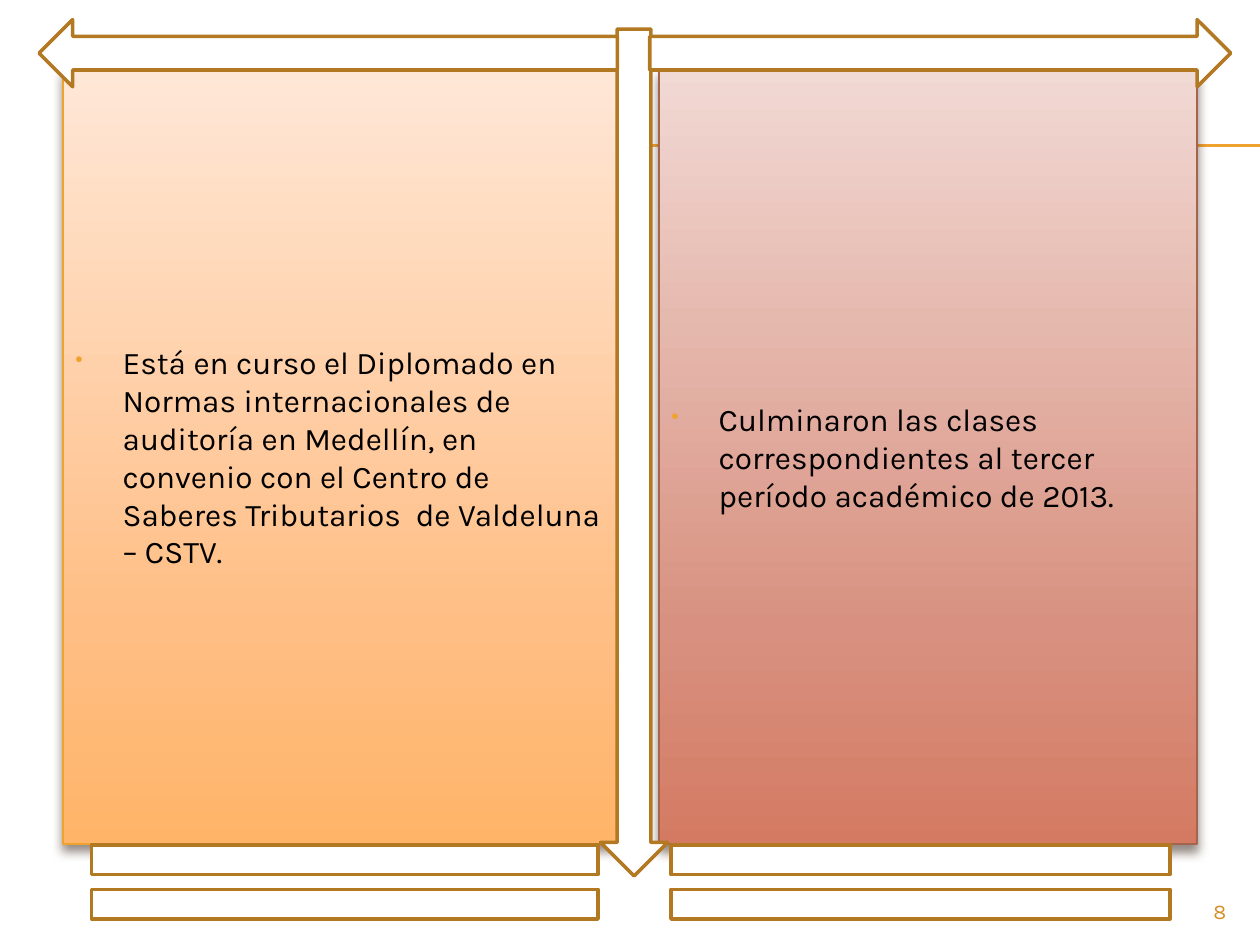
from dataclasses import dataclass

from lxml.etree import SubElement
from pptx import Presentation
from pptx.dml.color import RGBColor
from pptx.enum.shapes import MSO_CONNECTOR, MSO_SHAPE
from pptx.enum.text import MSO_ANCHOR, PP_ALIGN
from pptx.oxml.ns import qn
from pptx.shapes.autoshape import Shape
from pptx.slide import Slide
from pptx.text.text import _Paragraph
from pptx.util import Pt


@dataclass(frozen=True)
class Theme:
    font: str = "Karla"
    body_size: float = 18
    number_size: float = 12
    text: str = "000000"
    accent: str = "F0A22E"
    outline: str = "B27822"
    paper: str = "FFFFFF"
    number: str = "D48F29"
    shadow: str = "4E3B30"


@dataclass(frozen=True)
class Frame:
    left: float
    top: float
    width: float
    height: float

    def lengths(self) -> tuple[Pt, Pt, Pt, Pt]:
        return Pt(self.left), Pt(self.top), Pt(self.width), Pt(self.height)


@dataclass(frozen=True)
class Panel:
    frame: Frame
    gradient: tuple[str, str, str]
    border: str
    words: str


@dataclass(frozen=True)
class Ornament:
    kind: MSO_SHAPE
    frame: Frame


THEME = Theme()
GRADIENT_POSITIONS = (0, 72, 100)
BULLET_INDENT = 27

RULE_HEIGHTS = (82.8, 83.5)

PANELS = (
    Panel(
        Frame(36, 39.6, 318.2, 442.8),
        ("FFE7D7", "FFBE84", "FFB468"),
        THEME.accent,
        "Está en curso el Diplomado en Normas internacionales de auditoría en "
        "Medellín, en convenio con el Centro de Saberes Tributarios  de "
        "Valdeluna – CSTV.",
    ),
    Panel(
        Frame(376.6, 39.6, 307.4, 442.8),
        ("F1D9D4", "D89180", "D47A62"),
        "A5644E",
        "Culminaron las clases correspondientes al tercer período académico "
        "de 2013.",
    ),
)

ORNAMENTS = (
    Ornament(MSO_SHAPE.DOWN_ARROW, Frame(343.1, 16.6, 38.4, 484)),
    Ornament(MSO_SHAPE.RIGHT_ARROW, Frame(371.3, 11.2, 332, 38.4)),
    Ornament(MSO_SHAPE.LEFT_ARROW, Frame(22.3, 11.2, 330.5, 38.4)),
    Ornament(MSO_SHAPE.MATH_EQUAL, Frame(0, 468, 394, 72)),
    Ornament(MSO_SHAPE.MATH_EQUAL, Frame(332, 468, 388, 72)),
)


def color(code: str) -> RGBColor:
    return RGBColor.from_string(code)


def add_outlined(slide: Slide, kind: MSO_SHAPE, frame: Frame, border: str, weight: float) -> Shape:
    shape = slide.shapes.add_shape(kind, *frame.lengths())
    shape.shadow.inherit = False
    shape.line.color.rgb = color(border)
    shape.line.width = Pt(weight)
    return shape


def fill_gradient(shape: Shape, codes: tuple[str, str, str]) -> None:
    shape.fill.gradient()
    shape.fill.gradient_angle = 270
    stops = shape._element.spPr.find(qn("a:gradFill")).find(qn("a:gsLst"))
    for stop in list(stops):
        stops.remove(stop)
    for position, code in zip(GRADIENT_POSITIONS, codes):
        stop = SubElement(stops, qn("a:gs"), pos=str(position * 1000))
        SubElement(stop, qn("a:srgbClr"), val=code)


def cast_shadow(shape: Shape) -> None:
    effects = shape._element.spPr.find(qn("a:effectLst"))
    shadow = SubElement(
        effects, qn("a:outerShdw"), blurRad=str(Pt(6)), dist=str(Pt(4)),
        dir="5400000", algn="t", rotWithShape="0",
    )
    tint = SubElement(shadow, qn("a:srgbClr"), val=THEME.shadow)
    SubElement(tint, qn("a:alpha"), val="60000")


def add_bullet(para: _Paragraph) -> None:
    properties = para._p.get_or_add_pPr()
    properties.set("marL", str(Pt(BULLET_INDENT)))
    properties.set("indent", str(-Pt(BULLET_INDENT)))
    tint = SubElement(properties, qn("a:buClr"))
    SubElement(tint, qn("a:srgbClr"), val=THEME.accent)
    SubElement(properties, qn("a:buSzPct"), val="70000")
    SubElement(properties, qn("a:buChar"), char="•")


def set_text(para: _Paragraph, words: str, size: float, code: str, alignment: PP_ALIGN) -> None:
    para.text = words
    para.alignment = alignment
    para.font.name = THEME.font
    para.font.size = Pt(size)
    para.font.color.rgb = color(code)


def draw_rule(slide: Slide, height: float) -> None:
    rule = slide.shapes.add_connector(
        MSO_CONNECTOR.STRAIGHT, Pt(40.3), Pt(height), Pt(720), Pt(height)
    )
    rule.line.color.rgb = color(THEME.accent)
    rule.line.width = Pt(0.75)
    SubElement(rule._element.spPr, qn("a:effectLst"))


def draw_panel(slide: Slide, panel: Panel) -> None:
    box = add_outlined(slide, MSO_SHAPE.RECTANGLE, panel.frame, panel.border, 0.79)
    fill_gradient(box, panel.gradient)
    cast_shadow(box)
    box.text_frame.word_wrap = True
    box.text_frame.vertical_anchor = MSO_ANCHOR.MIDDLE
    para = box.text_frame.paragraphs[0]
    add_bullet(para)
    set_text(para, panel.words, THEME.body_size, THEME.text, PP_ALIGN.LEFT)


def draw_ornament(slide: Slide, ornament: Ornament) -> None:
    shape = add_outlined(slide, ornament.kind, ornament.frame, THEME.outline, 2)
    shape.fill.solid()
    shape.fill.fore_color.rgb = color(THEME.paper)


def draw_page_number(slide: Slide, number: str) -> None:
    box = slide.shapes.add_textbox(*Frame(648, 509.8, 59.8, 19.4).lengths())
    box.text_frame.word_wrap = True
    set_text(box.text_frame.paragraphs[0], number, THEME.number_size, THEME.number, PP_ALIGN.RIGHT)


def main() -> None:
    deck = Presentation()
    deck.slide_width, deck.slide_height = Pt(720), Pt(540)
    page = deck.slides.add_slide(deck.slide_layouts[6])
    for height in RULE_HEIGHTS:
        draw_rule(page, height)
    for panel in PANELS:
        draw_panel(page, panel)
    for ornament in ORNAMENTS:
        draw_ornament(page, ornament)
    draw_page_number(page, "8")
    deck.save("out.pptx")


if __name__ == "__main__":
    main()
